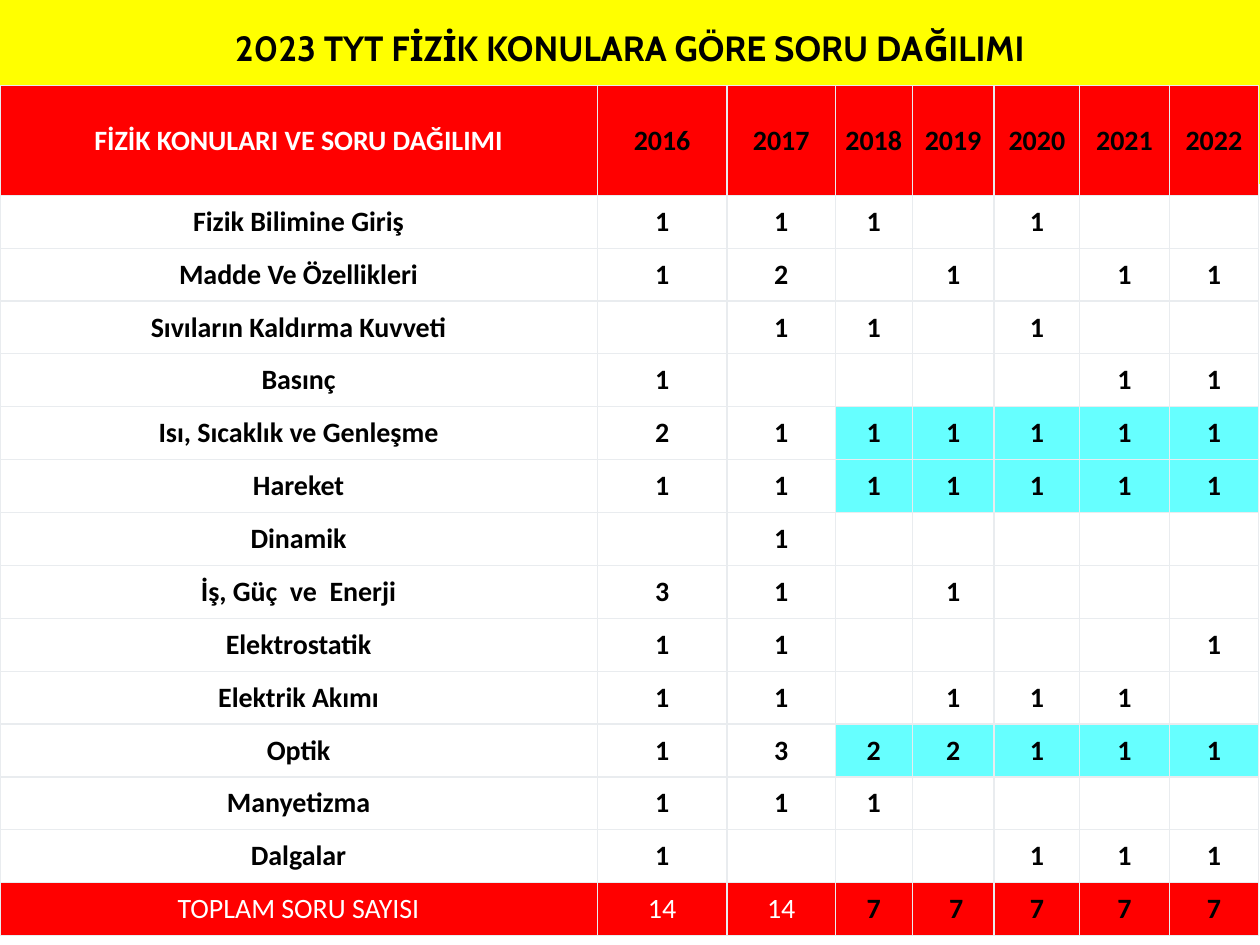
from lxml.etree import SubElement
from pptx import Presentation
from pptx.dml.color import RGBColor
from pptx.enum.text import MSO_ANCHOR as Anchor, MSO_AUTO_SIZE as AutoSize, PP_ALIGN as Align
from pptx.oxml.ns import qn
from pptx.util import Inches, Pt

YELLOW = RGBColor(0xFF, 0xFF, 0x00)
RED = RGBColor(0xFF, 0x00, 0x00)
CYAN = RGBColor(0x66, 0xFF, 0xFF)
WHITE = RGBColor(0xFF, 0xFF, 0xFF)
BLACK = RGBColor(0x00, 0x00, 0x00)
BORDER = RGBColor(0xE9, 0xEC, 0xEF)

COLUMN_WIDTHS = (4.74, 1.03, 0.86, 0.61, 0.65, 0.68, 0.71, 0.71)
HEADER_HEIGHT, ROW_HEIGHT = 0.87, 0.42
FIRST_HIGHLIGHT_COLUMN = 3

HEADER = ("FİZİK KONULARI VE SORU DAĞILIMI", *range(2016, 2023))
TOPICS = (
    ("Fizik Bilimine Giriş", 1, 1, 1, "", 1, "", ""),
    ("Madde Ve Özellikleri", 1, 2, "", 1, "", 1, 1),
    ("Sıvıların Kaldırma Kuvveti", "", 1, 1, "", 1, "", ""),
    ("Basınç", 1, "", "", "", "", 1, 1),
    ("Isı, Sıcaklık ve Genleşme", 2, 1, 1, 1, 1, 1, 1),
    ("Hareket", 1, 1, 1, 1, 1, 1, 1),
    ("Dinamik", "", 1, "", "", "", "", ""),
    ("İş, Güç  ve  Enerji", 3, 1, "", 1, "", "", ""),
    ("Elektrostatik", 1, 1, "", "", "", "", 1),
    ("Elektrik Akımı", 1, 1, "", 1, 1, 1, ""),
    ("Optik", 1, 3, 2, 2, 1, 1, 1),
    ("Manyetizma", 1, 1, 1, "", "", "", ""),
    ("Dalgalar", 1, "", "", "", 1, 1, 1),
)
TOTALS = ("TOPLAM SORU SAYISI", 14, 14, 7, " 7", 7, 7, 7)


class SlideBuilder:
    """Holds the table style and the slide being built."""

    def __init__(self, slide):
        self.slide = slide
        self.title_font = "Cabin"
        self.table_font = "Calibri"
        self.margin = Inches(0.02)

    def format_paragraph(self, paragraph, name, size, color, bold):
        paragraph.alignment = Align.CENTER
        font = paragraph.font
        font.name, font.size, font.bold = name, Pt(size), bold
        font.color.rgb = color

    def add_title(self, text):
        title = self.slide.shapes.title
        title.left, title.top = Inches(0), Inches(0)
        title.width, title.height = Inches(10), Inches(1.46)
        title.fill.solid()
        title.fill.fore_color.rgb = YELLOW
        frame = title.text_frame
        frame.text = text
        frame.auto_size = AutoSize.NONE
        frame.vertical_anchor = Anchor.MIDDLE
        frame.margin_bottom = Inches(0.75)
        self.format_paragraph(frame.paragraphs[0], self.title_font, 20, BLACK, True)

    def add_borders(self, cell):
        properties = cell._tc.get_or_add_tcPr()
        for side in ("a:lnL", "a:lnR", "a:lnT", "a:lnB"):
            line = SubElement(properties, qn(side), w=str(Pt(0.75)))
            fill = SubElement(line, qn("a:solidFill"))
            SubElement(fill, qn("a:srgbClr"), val=str(BORDER))

    def fill_cell(self, cell, value, fill, color, bold):
        cell.text = str(value)
        cell.vertical_anchor = Anchor.MIDDLE
        cell.margin_left = cell.margin_right = self.margin
        cell.margin_top = cell.margin_bottom = self.margin
        self.format_paragraph(cell.text_frame.paragraphs[0], self.table_font, 16, color, bold)
        self.add_borders(cell)
        cell.fill.solid()
        cell.fill.fore_color.rgb = fill

    def add_table(self, rows):
        heights = [HEADER_HEIGHT] + [ROW_HEIGHT] * (len(rows) - 1)
        table = self.slide.shapes.add_table(
            len(rows), len(COLUMN_WIDTHS), Inches(0), Inches(0.68),
            Inches(sum(COLUMN_WIDTHS)), Inches(sum(heights))).table
        table.first_row = table.horz_banding = False
        for column, width in zip(table.columns, COLUMN_WIDTHS):
            column.width = Inches(width)
        for row, height, values in zip(table.rows, heights, rows):
            row.height = Inches(height)
            asked_every_year = all(values[FIRST_HIGHLIGHT_COLUMN:])
            for index, value in enumerate(values):
                recent = index >= FIRST_HIGHLIGHT_COLUMN
                fill, color, bold = WHITE, BLACK, True
                if values is HEADER:
                    fill, color = RED, BLACK if index else WHITE
                elif values is TOTALS:
                    fill, color, bold = RED, BLACK if recent else WHITE, recent
                elif recent and asked_every_year:
                    fill = CYAN
                self.fill_cell(row.cells[index], value, fill, color, bold)


def main():
    presentation = Presentation()
    presentation.slide_width, presentation.slide_height = Inches(10), Inches(7.5)
    builder = SlideBuilder(presentation.slides.add_slide(presentation.slide_layouts[5]))
    builder.add_title("2023 TYT FİZİK KONULARA GÖRE SORU DAĞILIMI")
    builder.add_table((HEADER, *TOPICS, TOTALS))
    presentation.save("out.pptx")


if __name__ == "__main__":
    main()
